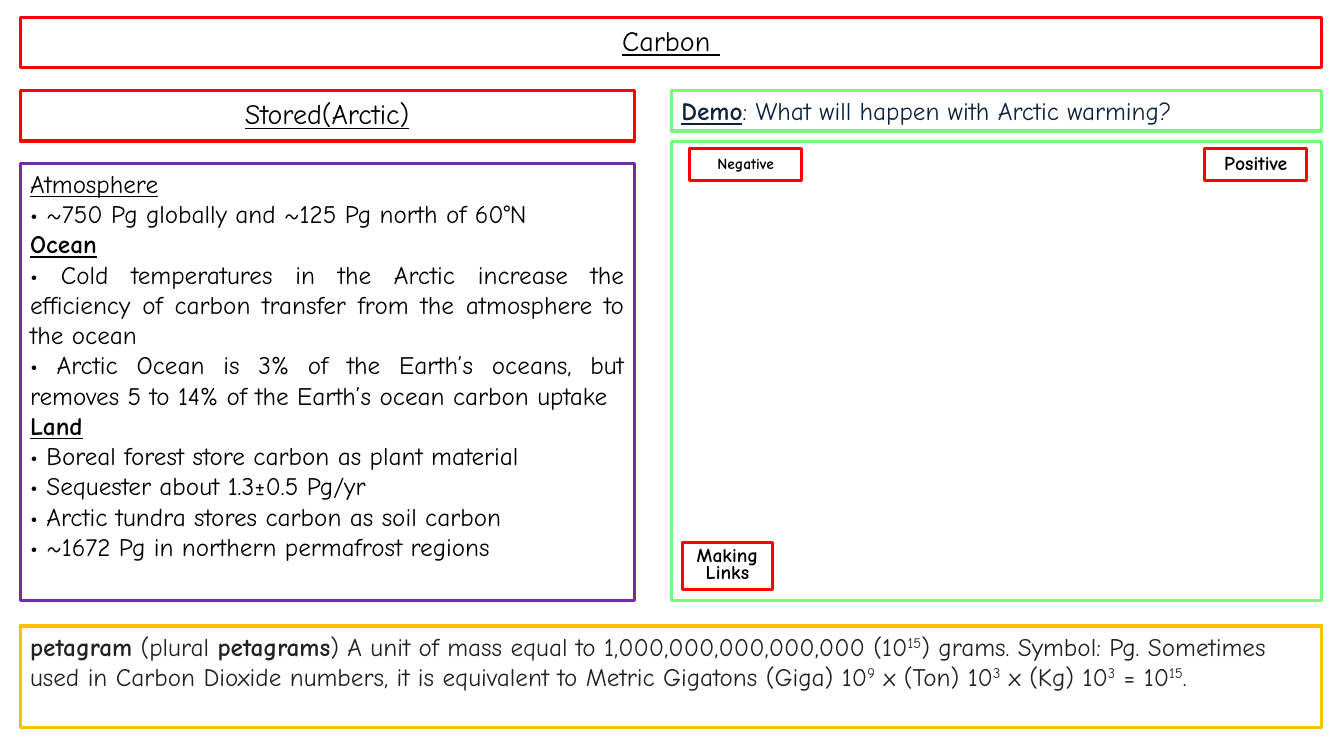
"""Build a slide on carbon stored in the Arctic."""
import pptx
import pptx.dml.color
import pptx.enum.shapes
import pptx.enum.text
import pptx.util

Inches = pptx.util.Inches
Align = pptx.enum.text.PP_ALIGN
Anchor = pptx.enum.text.MSO_ANCHOR

FONT = "Comic Neue"
COLORS = {
    "red": "FF0000", "purple": "7030A0", "gold": "FFC000", "green": "73FB79",
    "black": "000000", "gray": "222222", "navy": "0F233D",
}
LEFT, RIGHT = 0.2, 6.66
FULL, HALF, SIDE = 12.91, 6.09, 6.45

STORES = [
    [("Atmosphere", "u")],
    [("• ~750 Pg globally and ~125 Pg north of 60°N", "")],
    [("Ocean", "bu")],
    [("• Cold temperatures in the Arctic increase the efficiency of carbon "
      "transfer from the atmosphere to the ocean", "")],
    [("• Arctic Ocean is 3% of the Earth’s oceans, but removes 5 to 14% of "
      "the Earth’s ocean carbon uptake", "")],
    [("Land", "bu")],
    [("• Boreal forest store carbon as plant material", "")],
    [("• Sequester about 1.3±0.5 Pg/yr", "")],
    [("• Arctic tundra stores carbon as soil carbon", "")],
    [("• ~1672 Pg in northern permafrost regions", "")],
]
UNIT = [[
    ("petagram", "b"), (" (plural ", ""), ("petagrams", "b"),
    (") A unit of mass equal to 1,000,000,000,000,000 (10", ""), ("15", "^"),
    (") grams. Symbol: Pg. Sometimes used in Carbon Dioxide numbers, it is "
     "equivalent to Metric Gigatons (Giga) 10", ""), ("9", "^"),
    (" x (Ton) 10", ""), ("3", "^"), (" x (Kg) 10", ""), ("3", "^"),
    (" = 10", ""), ("15", "^"), (".", ""),
]]
DEMO = [[("Demo", "bu"), (": What will happen with Arctic warming?", "")]]
TAGS = [
    ("Making Links", (6.77, 5.38, 0.89, 0.47), 14, 0.7),
    ("Positive", (11.95, 1.47, 1.01, 0.32), 14, 0.9),
    ("Negative", (6.84, 1.47, 1.11, 0.32), 11, 0.9),
]


def rgb(name):
    """Return the named colour."""
    return pptx.dml.color.RGBColor.from_string(COLORS[name])


def apply(target, values):
    """Set each attribute from a dict of values."""
    for name, value in values.items():
        setattr(target, name, value)


def frame(shape, place, color):
    """Place a shape and give it a plain coloured outline."""
    names = ("left", "top", "width", "height")
    apply(shape, dict(zip(names, map(Inches, place))))
    shape.fill.background()
    shape.line.color.rgb = rgb(color)
    shape.line.width = pptx.util.Pt(2.25)


def box(slide, place, color):
    """Add an outlined rectangle."""
    kind = pptx.enum.shapes.MSO_SHAPE.RECTANGLE
    shape = slide.shapes.add_shape(kind, *map(Inches, place))
    shape.shadow.inherit = False
    frame(shape, place, color)
    return shape


def write(shape, paras, size=18, color="black", align=Align.LEFT,
          anchor=Anchor.TOP, space=1.0):
    """Write paragraphs of runs marked b, u or ^ into a shape."""
    text = shape.text_frame
    apply(text, {"word_wrap": True, "vertical_anchor": anchor,
                 "auto_size": pptx.enum.text.MSO_AUTO_SIZE.NONE})
    for index, runs in enumerate(paras):
        para = text.add_paragraph() if index else text.paragraphs[0]
        apply(para, {"alignment": align, "line_spacing": space})
        for words, marks in runs:
            run = para.add_run()
            run.text = words
            apply(run.font, {"name": FONT, "size": pptx.util.Pt(size),
                             "bold": "b" in marks, "underline": "u" in marks})
            run.font.color.rgb = rgb(color)
            if "^" in marks:
                run._r.get_or_add_rPr().set("baseline", "30000")


def label(shape, words, marks, size, space=0.9):
    """Write one centred label into a shape."""
    write(shape, [[(words, marks)]], size, align=Align.CENTER,
          anchor=Anchor.MIDDLE, space=space)


def main():
    """Build and save the slide."""
    deck = pptx.Presentation()
    apply(deck, {"slide_width": Inches(13.33), "slide_height": Inches(7.5)})
    slide = deck.slides.add_slide(deck.slide_layouts[5])

    title = slide.shapes.title
    frame(title, (LEFT, 0.17, FULL, 0.5), "red")
    label(title, "Carbon ", "u", 20)

    stores = box(slide, (LEFT, 1.62, HALF, 4.34), "purple")
    write(stores, STORES, align=Align.JUSTIFY)
    head = box(slide, (LEFT, 0.9, HALF, 0.5), "red")
    label(head, "Stored(Arctic)", "u", 20)
    unit = box(slide, (LEFT, 6.21, FULL, 1.01), "gold")
    write(unit, UNIT, color="gray")
    demo = box(slide, (RIGHT, 0.9, SIDE, 0.4), "green")
    write(demo, DEMO, color="navy")
    box(slide, (RIGHT, 1.4, SIDE, 4.56), "green")

    for words, place, size, space in TAGS:
        label(box(slide, place, "red"), words, "b", size, space)
    deck.save("out.pptx")


if __name__ == "__main__":
    main()
